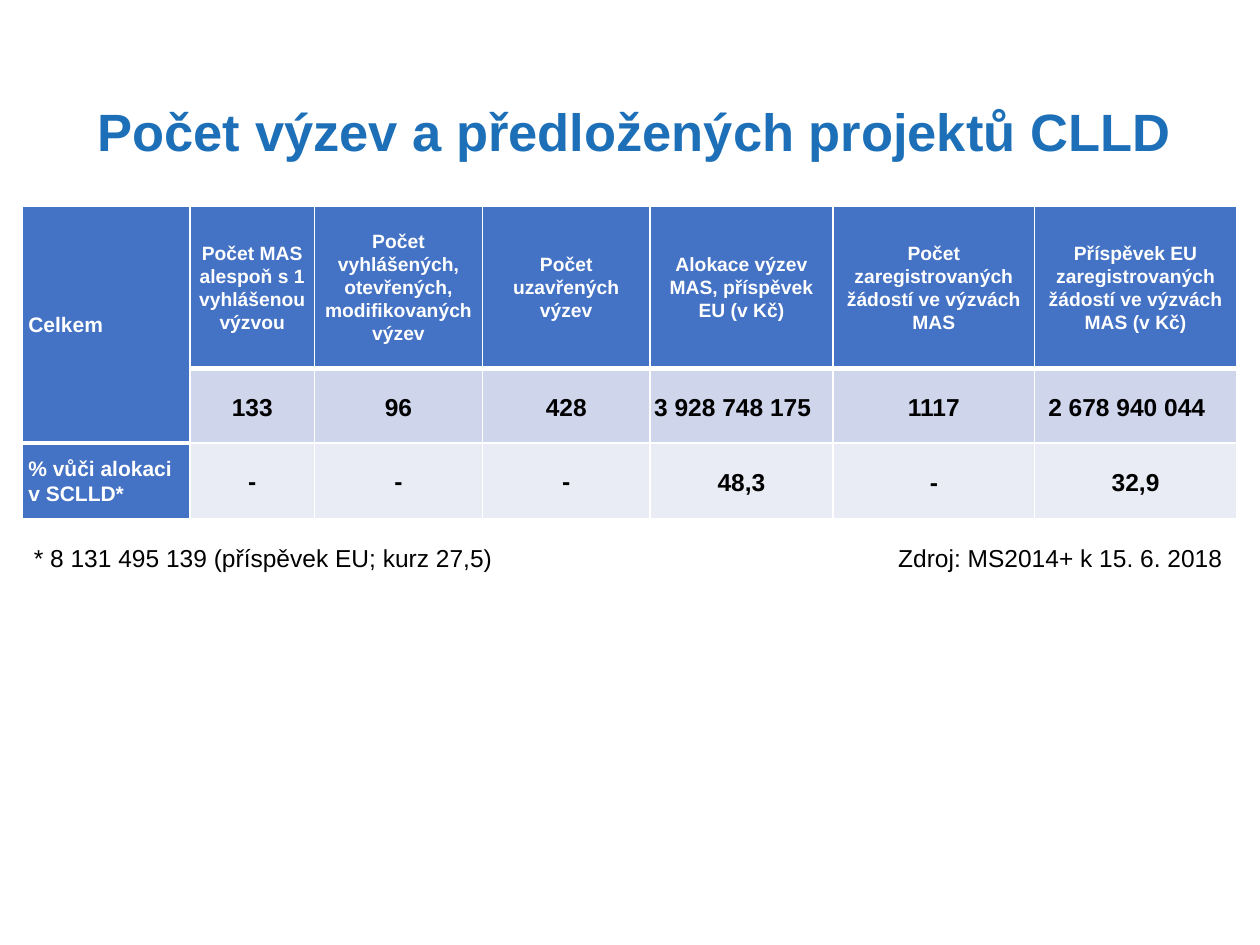
from pptx import Presentation
from pptx.dml.color import RGBColor
from pptx.enum.text import MSO_ANCHOR, MSO_AUTO_SIZE, PP_ALIGN
from pptx.oxml import parse_xml
from pptx.oxml.ns import nsdecls
from pptx.util import Inches, Pt

W, H = Inches(10), Inches(7.5)
BLUE, WHITE, BLACK = "4472C4", "FFFFFF", "000000"
BANDS = [BLUE, "CFD5EA", "E9EBF5"]
COLS = [13.3, 9.9, 13.3, 13.3, 14.5, 16, 16]
ROWS = [12.9, 5.9, 6]
DATA = [
    ["Celkem", "Počet MAS alespoň s 1 vyhlášenou výzvou",
     "Počet vyhlášených, otevřených, modifikovaných výzev",
     "Počet uzavřených výzev", "Alokace výzev MAS, příspěvek EU (v Kč)",
     "Počet zaregistrovaných žádostí ve výzvách MAS",
     "Příspěvek EU zaregistrovaných žádostí ve výzvách MAS (v Kč)"],
    ["", "133", "96", "428", "3 928 748 175", "1117", "2 678 940 044"],
    ["% vůči alokaci v SCLLD*", "-", "-", "-", "48,3", "-", "32,9"],
]


def rgb(value):
    return RGBColor.from_string(value)


def place(x, y, w, h):
    return [int(v * size / 100) for v, size in zip((x, y, w, h), (W, H, W, H))]


def style(p, size, color, bold=False, align=PP_ALIGN.LEFT, spacing=1.0):
    p.alignment, p.line_spacing = align, spacing
    p.space_before = Pt(0)
    f = p.font
    f.name, f.size, f.bold = "Arial", Pt(size), bold
    f.color.rgb = rgb(color)


def add_title(s, box, text):
    sp = s.shapes.title
    sp.left, sp.top, sp.width, sp.height = box
    tf = sp.text_frame
    tf.text = text
    tf.word_wrap = True
    tf.auto_size = MSO_AUTO_SIZE.SHAPE_TO_FIT_TEXT
    tf.vertical_anchor = MSO_ANCHOR.MIDDLE
    style(tf.paragraphs[0], 30, "1D70B8", True, PP_ALIGN.CENTER, 0.9)


def add_borders(cell, top, bottom):
    tcPr = cell._tc.get_or_add_tcPr()
    for side, width in (("L", 1), ("R", 1), ("T", top), ("B", bottom)):
        tcPr.append(parse_xml(
            f'<a:ln{side} {nsdecls("a")} w="{Pt(width)}"><a:solidFill>'
            f'<a:srgbClr val="{WHITE}"/></a:solidFill></a:ln{side}>'))


def format_cell(cell, r, c, text):
    label, header = c == 0, r == 0
    add_borders(cell, 3 if r == 1 or (label and r == 2) else 1,
                3 if header or (label and r == 1) else 1)
    cell.fill.solid()
    cell.fill.fore_color.rgb = rgb(BLUE if label else BANDS[r])
    cell.vertical_anchor = MSO_ANCHOR.MIDDLE
    cell.margin_left = cell.margin_right = Inches(0.05)
    cell.margin_top = cell.margin_bottom = 0
    if r == 1 and c in (4, 6):
        cell.margin_left, cell.margin_right = 0, Inches(0.14)
    if text:
        cell.text = text
        style(cell.text_frame.paragraphs[0],
              12 if label else 11 if header else 14,
              WHITE if label or header else BLACK, True,
              PP_ALIGN.LEFT if label else PP_ALIGN.CENTER,
              1.15 if not label and (r == 1 or (r == 2 and c > 3)) else 1.07)


def add_summary(s, box):
    table = s.shapes.add_table(len(ROWS), len(COLS), *box).table
    for col, share in zip(table.columns, COLS):
        col.width = int(box[2] * share / sum(COLS))
    for row, share in zip(table.rows, ROWS):
        row.height = int(box[3] * share / sum(ROWS))
    for r, texts in enumerate(DATA):
        for c, text in enumerate(texts):
            format_cell(table.cell(r, c), r, c, text)
    table.cell(0, 0).merge(table.cell(1, 0))


def add_note(s, box, text, wrap):
    tf = s.shapes.add_textbox(*box).text_frame
    tf.text = text
    tf.word_wrap = wrap
    tf.auto_size = MSO_AUTO_SIZE.SHAPE_TO_FIT_TEXT
    style(tf.paragraphs[0], 14, BLACK)


def main():
    prs = Presentation()
    prs.slide_width, prs.slide_height = W, H
    s = prs.slides.add_slide(prs.slide_layouts[5])
    add_title(s, place(5.9, 10.5, 88.9, 7.5),
              "Počet výzev a předložených projektů CLLD")
    add_summary(s, place(1.75, 21.8, 96.4, 33.1))
    add_note(s, place(1.7, 56.8, 39.9, 4.5),
             "* 8 131 495 139 (příspěvek EU; kurz 27,5)", True)
    add_note(s, place(70.3, 56.8, 27.8, 4.5),
             "Zdroj: MS2014+ k 15. 6. 2018", False)
    prs.save("out.pptx")


if __name__ == "__main__":
    main()
